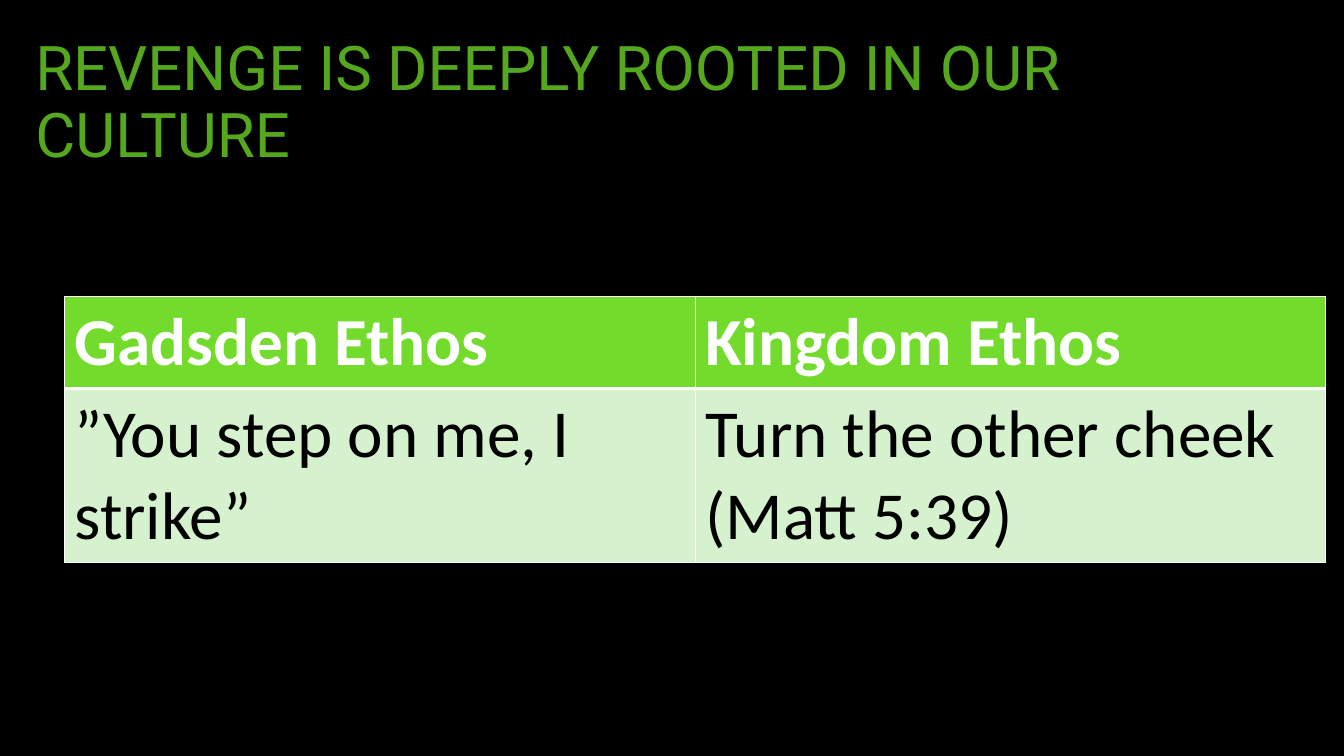
from dataclasses import dataclass

from lxml.etree import SubElement
from pptx import Presentation
from pptx.dml.color import RGBColor as RGB
from pptx.enum.text import MSO_ANCHOR as Anchor, MSO_AUTO_SIZE as AutoSize, PP_ALIGN as Align
from pptx.oxml.ns import qn
from pptx.util import Inches, Pt


@dataclass(frozen=True)
class Theme:
    background: str = "000000"
    title: str = "55A81D"
    header_fill: str = "72DB2B"
    body_fill: str = "D5F1CD"
    header_text: str = "FFFFFF"
    body_text: str = "000000"
    rule: str = "FFFFFF"
    title_font: str = "Roboto"
    table_font: str = "Calibri"
    title_size: int = 44
    table_size: int = 48


THEME = Theme()
ETHOS_ROWS = [
    ("Gadsden Ethos", "Kingdom Ethos"),
    ("”You step on me, I strike”", "Turn the other cheek (Matt 5:39)"),
]


def add_span(para, text, font_name, size, color, bold=False):
    span = para.add_run()
    span.text = text
    span.font.name = font_name
    span.font.size = Pt(size)
    span.font.bold = bold
    span.font.color.rgb = RGB.from_string(color)


def set_borders(cell, **widths):
    """Rule the cell's sides (L, R, T, B) with widths in points."""
    properties = cell._tc.get_or_add_tcPr()
    for side, width in widths.items():
        line = SubElement(properties, qn(f"a:ln{side}"), w=str(Pt(width)))
        fill = SubElement(line, qn("a:solidFill"))
        SubElement(fill, qn("a:srgbClr"), val=THEME.rule)


def place_title(page, text, left, top, width, height):
    title = page.shapes.title
    title.left, title.top = Inches(left), Inches(top)
    title.width, title.height = Inches(width), Inches(height)
    frame = title.text_frame
    frame.word_wrap = True
    frame.auto_size = AutoSize.NONE
    frame.vertical_anchor = Anchor.MIDDLE
    para = frame.paragraphs[0]
    para.alignment = Align.LEFT
    para.line_spacing = 0.9
    add_span(para, text, THEME.title_font, THEME.title_size, THEME.title)


def place_table(page, rows, left, top, width, row_heights):
    frame = page.shapes.add_table(
        len(rows), len(rows[0]), Inches(left), Inches(top),
        Inches(width), Inches(sum(row_heights)))
    table = frame.table
    for row, height in zip(table.rows, row_heights):
        row.height = Inches(height)
    for row_index, texts in enumerate(rows):
        header = row_index == 0
        for column, text in enumerate(texts):
            cell = table.cell(row_index, column)
            # The heavy rule under the header is shared with the row below
            set_borders(cell, L=1, R=1, T=1 if header else 3, B=3 if header else 1)
            cell.fill.solid()
            cell.fill.fore_color.rgb = RGB.from_string(
                THEME.header_fill if header else THEME.body_fill)
            color = THEME.header_text if header else THEME.body_text
            add_span(cell.text_frame.paragraphs[0], text, THEME.table_font,
                     THEME.table_size, color, bold=header)


def build_comparison_page(deck):
    page = deck.slides.add_slide(deck.slide_layouts[5])
    # Background
    page.background.fill.solid()
    page.background.fill.fore_color.rgb = RGB.from_string(THEME.background)
    # Title
    place_title(page, "REVENGE IS DEEPLY ROOTED IN OUR CULTURE", 0.25, 0.22, 12.9, 1.62)
    # Ethos comparison
    place_table(page, ETHOS_ROWS, 0.64, 2.94, 12.51, (0.91, 1.73))


def main():
    deck = Presentation()
    deck.slide_width, deck.slide_height = Inches(13.33), Inches(7.5)
    build_comparison_page(deck)
    deck.save("out.pptx")


if __name__ == "__main__":
    main()
